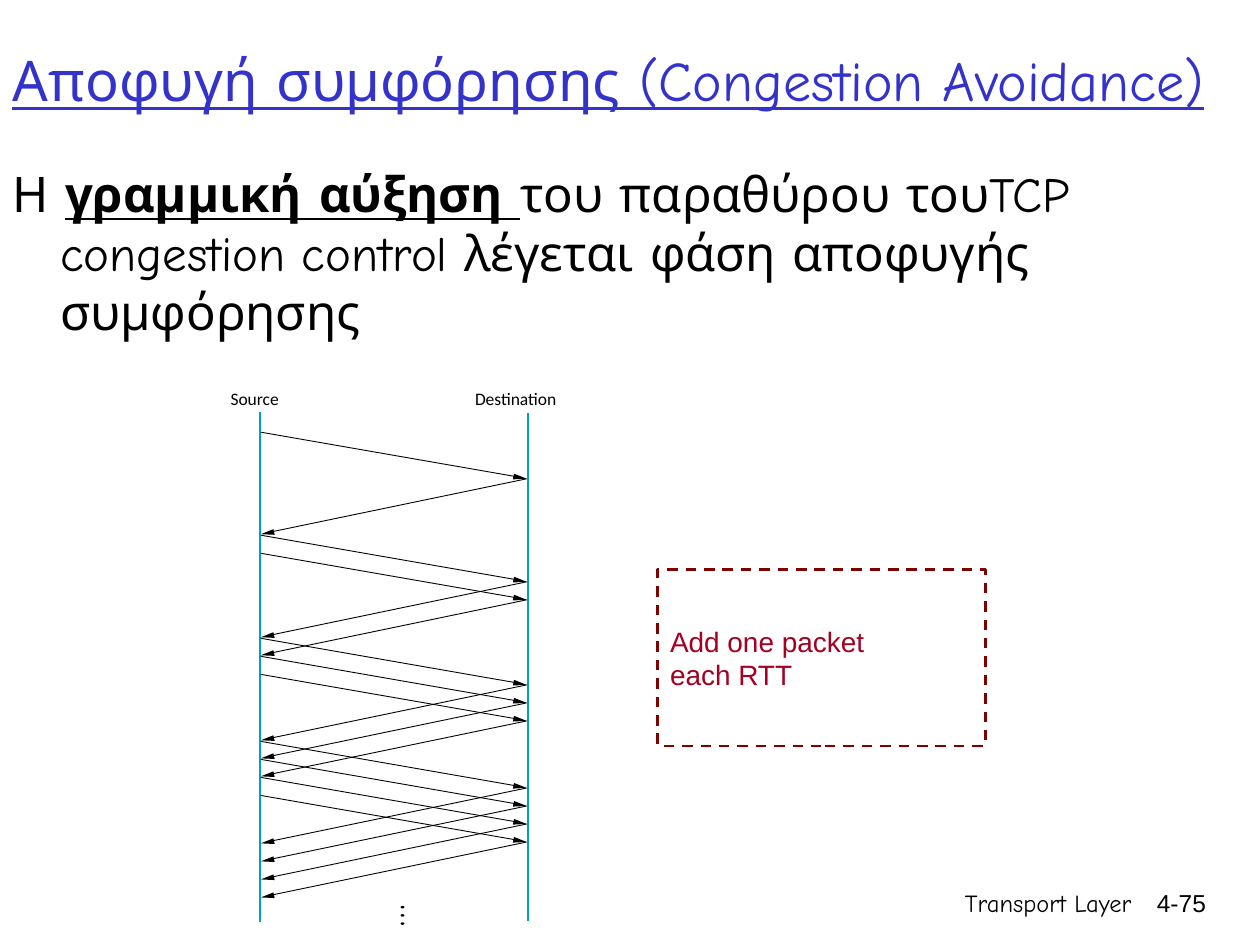
"""Build the congestion avoidance slide with its packet timing diagram."""
from lxml import etree
from pptx import Presentation
from pptx import util as u
from pptx.dml.color import RGBColor
from pptx.enum import dml, shapes, text
from pptx.oxml.ns import qn

BLACK = RGBColor(0, 0, 0)
BLUE = RGBColor(0x33, 0x33, 0xCC)
TEAL = RGBColor(0x00, 0xA0, 0xC6)
MAROON = RGBColor(0x80, 0x00, 0x00)
CRIMSON = RGBColor(0xA5, 0x00, 0x21)

prs = Presentation()
prs.slide_width, prs.slide_height = u.Inches(10), u.Inches(7.5)
COL, ROW = prs.slide_width // 100, prs.slide_height // 75
s = prs.slides.add_slide(prs.slide_layouts[6])


def write(tf, paragraphs, name, size, color, align=text.PP_ALIGN.LEFT):
    for i, runs in enumerate(paragraphs):
        p = tf.paragraphs[0] if i == 0 else tf.add_paragraph()
        p.alignment = align
        for words, style in runs:
            r = p.add_run()
            r.text = words
            r.font.color.rgb = color
            for key, value in {"name": name, "size": u.Pt(size), **style}.items():
                setattr(r.font, key, value)


def draw_line(x1, y1, x2, y2, color, width):
    line = s.shapes.add_connector(
        shapes.MSO_CONNECTOR.STRAIGHT,
        round(x1 * COL), round(y1 * ROW), round(x2 * COL), round(y2 * ROW))
    line.line.color.rgb = color
    line.line.width = u.Pt(width)
    etree.SubElement(line._element.spPr, qn("a:effectLst"))


LEFT, RIGHT = text.PP_ALIGN.LEFT, text.PP_ALIGN.RIGHT
TOP, MIDDLE = text.MSO_ANCHOR.TOP, text.MSO_ANCHOR.MIDDLE
UNDERLINED = {"underline": True}
body = [
    ("Η ", {}),
    ("γραμμική αύξηση ", {"bold": True, "underline": True}),
    ("του παραθύρου τουTCP congestion control λέγεται φάση αποφυγής συμφόρησης", {}),
]
boxes = [
    (0, 0, 96.7, 12.5, [("Αποφυγή συμφόρησης (Congestion Avoidance)", UNDERLINED)],
     "Comic Neue", 32, BLUE, LEFT, MIDDLE),
    (0, 12.5, 100, 50.8, body, "Comic Neue", 28, BLACK, LEFT, TOP),
    (89.3, 70, 7.4, 5, [("4-75", {})], "Arial", 14, BLACK, RIGHT, TOP),
    (50, 70, 40.8, 5, [("Transport Layer", {})], "Comic Neue", 14, BLACK, RIGHT, TOP),
]
for x, y, w, h, runs, name, size, color, align, anchor in boxes:
    sp = s.shapes.add_textbox(round(x * COL), round(y * ROW), round(w * COL), round(h * ROW))
    tf = sp.text_frame
    tf.word_wrap, tf.vertical_anchor = True, anchor
    write(tf, [runs], name, size, color, align)
    if runs is body:
        p = tf.paragraphs[0]
        p.space_before = u.Pt(5.6)
        pPr = p._p.get_or_add_pPr()
        pPr.set("marL", str(u.Inches(0.38)))
        pPr.set("indent", str(-u.Inches(0.38)))

SOURCE, DEST = 20.7, 41.8
for label, x, w in [("Source", 18.3, 4.4), ("Destination", 37.7, 6.9)]:
    sp = s.shapes.add_textbox(round(x * COL), round(30.8 * ROW), round(w * COL), round(1.7 * ROW))
    tf = sp.text_frame
    for side in ("left", "top", "right", "bottom"):
        setattr(tf, f"margin_{side}", 0)
    tf.word_wrap, tf.auto_size = False, text.MSO_AUTO_SIZE.SHAPE_TO_FIT_TEXT
    write(tf, [[(label, {})]], "Calibri", 10, BLACK)
draw_line(20.65, 32.7, 20.65, 73.2, TEAL, 1)
draw_line(41.9, 32.8, 41.9, 73.1, TEAL, 1)

FIRST, ROUND, PACKET = 34.3, 8.18, 1.43
TRIP, REPLY = 3.7, 4.4
for rtt in range(4):
    for packet in range(rtt + 1):
        sent = FIRST + rtt * ROUND + packet * PACKET
        arrived = sent + TRIP
        acked = arrived + REPLY
        draw_line(SOURCE, sent, DEST - 1, arrived - 0.2, BLACK, 0.5)
        draw_line(DEST, arrived, SOURCE + 0.9, acked - 0.2, BLACK, 0.5)
        heads = [
            [(DEST, arrived), (DEST - 1, arrived - 0.4), (DEST - 1.1, arrived + 0.05)],
            [(SOURCE, acked), (SOURCE + 1, acked - 0.4), (SOURCE + 1.1, acked + 0.05)],
        ]
        for head in heads:
            tip, *rest = [(x * COL, y * ROW) for x, y in head]
            builder = s.shapes.build_freeform(*tip)
            builder.add_line_segments(rest, close=True)
            sp = builder.convert_to_shape()
            sp.shadow.inherit = False
            sp.fill.solid()
            sp.fill.fore_color.rgb = BLACK
            sp.line.fill.background()

for i in range(3):
    sp = s.shapes.add_shape(shapes.MSO_SHAPE.OVAL, round(31.8 * COL),
                            round((71.9 + 0.65 * i) * ROW), round(0.3 * COL), round(0.2 * ROW))
    sp.shadow.inherit = False
    sp.fill.solid()
    sp.fill.fore_color.rgb = BLACK
    sp.line.fill.background()

sp = s.shapes.add_shape(shapes.MSO_SHAPE.RECTANGLE, round(52.2 * COL), round(45.2 * ROW),
                        26 * COL, 14 * ROW)
sp.shadow.inherit = False
sp.fill.background()
sp.line.color.rgb = MAROON
sp.line.width = u.Pt(1.5)
sp.line.dash_style = dml.MSO_LINE.DASH
tf = sp.text_frame
tf.word_wrap, tf.vertical_anchor = True, MIDDLE
write(tf, [[("Add one packet", {})], [("each RTT", {})]], "Arial", 16, CRIMSON)

prs.save("out.pptx")
